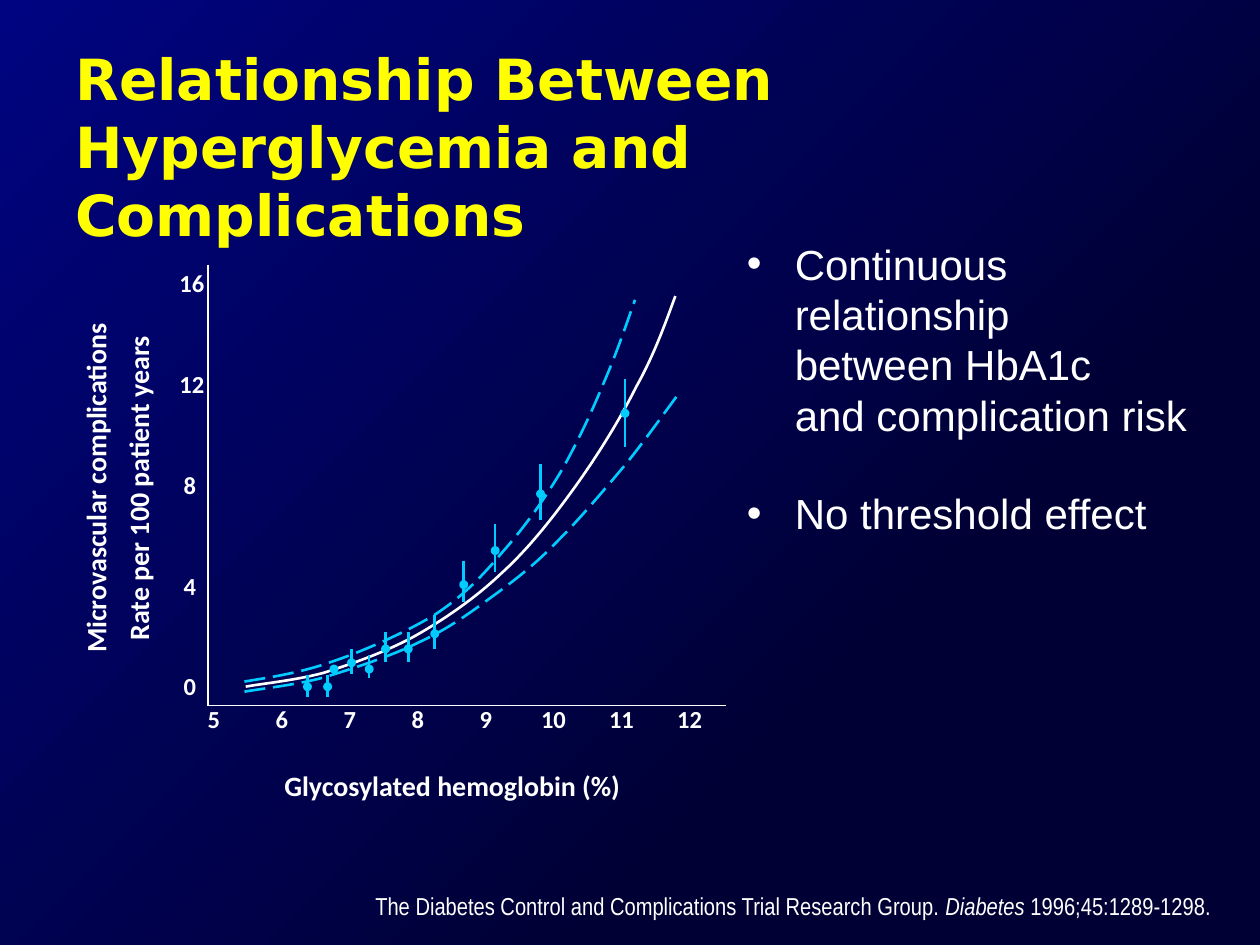
from dataclasses import dataclass
from lxml import etree
from pptx import Presentation
from pptx.dml.color import RGBColor
from pptx.enum.dml import MSO_LINE
from pptx.enum.shapes import MSO_CONNECTOR, MSO_SHAPE
from pptx.enum.text import MSO_ANCHOR, PP_ALIGN
from pptx.oxml.ns import qn
from pptx.util import Inches, Pt

LEFT, CENTER, RIGHT = PP_ALIGN.LEFT, PP_ALIGN.CENTER, PP_ALIGN.RIGHT
TOP, MIDDLE = MSO_ANCHOR.TOP, MSO_ANCHOR.MIDDLE
STRAIGHT, LONG_DASH = MSO_CONNECTOR.STRAIGHT, MSO_LINE.LONG_DASH
OVAL, RECTANGLE = MSO_SHAPE.OVAL, MSO_SHAPE.RECTANGLE


@dataclass(frozen=True)
class Theme:
    white: str = "FFFFFF"
    yellow: str = "FFFF00"
    cyan: str = "00CCFF"
    night: str = "000035"
    blue: str = "000480"
    title_font: str = "DejaVu Sans"
    body_font: str = "Arial"
    source_font: str = "Arial Narrow"
    chart_font: str = "Calibri"
    title_size: float = 32.4
    body_size: float = 24
    axis_title_size: float = 16
    small_size: float = 14
    curve_width: float = 1.5
    axis_width: float = 0.75


THEME = Theme()

SLIDE_SIZE = (10, 7.5)
TITLE = "Relationship Between Hyperglycemia and Complications"
BULLETS = [
    "Continuous relationship\vbetween HbA1c\vand complication risk",
    "No threshold effect",
]
SOURCE = [
    ("The Diabetes Control and Complications Trial Research Group. ", False),
    ("Diabetes", True),
    (" 1996;45:1289-1298.", False),
]
# text, box, rotation, alignment
AXIS_TITLES = [
    ("Microvascular complications", (-0.67, 3.67, 2.85, 0.37), 270, LEFT),
    ("Rate per 100 patient years", (-0.23, 3.67, 2.65, 0.37), 270, LEFT),
    ("Glycosylated hemoglobin (%)", (2.14, 6.05, 2.9, 0.37), 0, CENTER),
]
RATE_TICKS = ["16", "12", "8", "4", "0"]
HEMOGLOBIN_TICKS = ["5", "6", "7", "8", "9", "10", "11", "12"]
TICK_WIDTHS = {1: 0.31, 2: 0.4}  # by number of digits
RATE_CENTERS = {1: 1.5, 2: 1.52}
AXES = [((1.65, 2.1), (1.65, 5.6)), ((5.76, 5.6), (1.65, 5.6))]

# Bezier curves in inches: start, then two handles and an end for each segment
FITTED_CURVE = [
    (1.95, 5.45), (2.05, 5.43), (2.35, 5.4), (2.57, 5.34),
    (2.79, 5.27), (3.05, 5.18), (3.29, 5.05), (3.52, 4.92), (3.77, 4.75), (3.98, 4.55),
    (4.19, 4.36), (4.38, 4.12), (4.56, 3.87), (4.74, 3.62), (4.92, 3.33), (5.05, 3.07),
    (5.19, 2.82), (5.28, 2.57), (5.36, 2.35),
]
LOWER_LIMIT = [
    (1.94, 5.49), (2.04, 5.47), (2.33, 5.44), (2.56, 5.38),
    (2.79, 5.31), (3.1, 5.21), (3.32, 5.1), (3.54, 5), (3.71, 4.88), (3.9, 4.74),
    (4.08, 4.61), (4.26, 4.47), (4.43, 4.29), (4.61, 4.11), (4.81, 3.87), (4.97, 3.68),
    (5.13, 3.48), (5.3, 3.24), (5.39, 3.12),
]
UPPER_LIMIT = [
    (1.94, 5.41), (2.05, 5.39), (2.36, 5.35), (2.61, 5.26),
    (2.86, 5.18), (3.22, 5.02), (3.45, 4.88), (3.68, 4.73), (3.83, 4.57), (3.99, 4.38),
    (4.16, 4.19), (4.33, 3.95), (4.46, 3.73), (4.59, 3.5), (4.71, 3.24), (4.8, 3.02),
    (4.9, 2.79), (4.99, 2.52), (5.04, 2.38),
]
CURVES = [
    (FITTED_CURVE, THEME.white, None),
    (LOWER_LIMIT, THEME.cyan, LONG_DASH),
    (UPPER_LIMIT, THEME.cyan, LONG_DASH),
]
# x, dot centre, bar top, bar bottom
OBSERVATIONS = [
    (2.44, 5.45, 5.36, 5.53), (2.6, 5.45, 5.36, 5.53), (2.65, 5.31, None, None),
    (2.79, 5.26, 5.15, 5.35), (2.93, 5.31, 5.2, 5.38), (3.06, 5.15, 5.02, 5.25),
    (3.24, 5.15, 5.02, 5.25), (3.45, 5.03, 4.88, 5.15), (3.68, 4.64, 4.45, 4.78),
    (3.93, 4.37, 4.16, 4.54), (4.29, 3.92, 3.68, 4.13), (4.96, 3.28, 3.01, 3.55),
]
DOT = 0.05


def color(value):
    return RGBColor.from_string(value)


def add_backdrop(slide):
    """Radial gradient that starts dark in the bottom right corner."""
    backdrop = slide.shapes.add_shape(RECTANGLE, 0, 0, *map(Inches, SLIDE_SIZE))
    backdrop.shadow.inherit = False
    backdrop.line.fill.background()
    backdrop.fill.gradient()
    stops = backdrop.fill.gradient_stops
    for stop, value, position in zip(stops, (THEME.night, THEME.blue), (0.3, 1)):
        stop.color.rgb = color(value)
        stop.position = position
    linear = backdrop.element.find(".//" + qn("a:lin"))
    radial = etree.Element(qn("a:path"), path="circle")
    etree.SubElement(radial, qn("a:fillToRect"), l="100000", t="100000")
    linear.getparent().replace(linear, radial)


def add_text_box(slide, box, anchor=TOP, wrap=True, inset=None):
    shape = slide.shapes.add_textbox(*map(Inches, box))
    frame = shape.text_frame
    frame.word_wrap = wrap
    frame.vertical_anchor = anchor
    if inset is not None:
        frame.margin_left = frame.margin_right = Inches(inset)
        frame.margin_top = frame.margin_bottom = Inches(inset)
    return shape


def add_run(paragraph, text, font, size, value=THEME.white, bold=False, italic=False):
    for index, line in enumerate(text.split("\v")):
        if index:
            paragraph.add_line_break()
        run = paragraph.add_run()
        run.text = line
        run.font.name, run.font.size = font, Pt(size)
        run.font.bold, run.font.italic = bold, italic
        run.font.color.rgb = color(value)


def add_chart_label(slide, text, box, size, alignment=CENTER, rotation=0, anchor=TOP):
    shape = add_text_box(slide, box, anchor, wrap=False)
    shape.rotation = rotation
    paragraph = shape.text_frame.paragraphs[0]
    paragraph.alignment = alignment
    add_run(paragraph, text, THEME.chart_font, size, bold=True)


def add_tick(slide, text, center, top):
    width = TICK_WIDTHS[len(text)]
    add_chart_label(slide, text, (center - width / 2, top, width, 0.34), THEME.small_size, RIGHT)


def add_line(slide, start, end, value, width):
    line = slide.shapes.add_connector(STRAIGHT, *map(Inches, (*start, *end)))
    line.line.color.rgb = color(value)
    line.line.width = Pt(width)
    etree.SubElement(line.element.spPr, qn("a:effectLst"))


def add_curve(slide, nodes, value, dash):
    """Build an outline through all nodes, then join each three steps into a Bezier segment."""
    start, *steps = [tuple(map(Inches, node)) for node in nodes]
    builder = slide.shapes.build_freeform(*start)
    builder.add_line_segments(steps, close=False)
    curve = builder.convert_to_shape()
    straight = list(curve.element.iter(qn("a:lnTo")))
    for first in range(0, len(straight), 3):
        segment = etree.Element(qn("a:cubicBezTo"))
        straight[first].addprevious(segment)
        for step in straight[first:first + 3]:
            segment.append(step[0])
            step.getparent().remove(step)
    curve.shadow.inherit = False
    curve.fill.background()
    curve.line.color.rgb = color(value)
    curve.line.width = Pt(THEME.curve_width)
    if dash is not None:
        curve.line.dash_style = dash


def add_observation(slide, x, y, top, bottom):
    dot = slide.shapes.add_shape(OVAL, *map(Inches, (x - DOT / 2, y - DOT / 2, DOT, DOT)))
    dot.shadow.inherit = False
    dot.fill.solid()
    dot.fill.fore_color.rgb = dot.line.color.rgb = color(THEME.cyan)
    dot.line.width = Pt(THEME.curve_width)
    if top is not None:
        add_line(slide, (x, top), (x, bottom), THEME.cyan, THEME.curve_width)


def add_bullets(slide):
    frame = add_text_box(slide, (5.83, 1.84, 4, 3.49)).text_frame
    for index, text in enumerate(BULLETS):
        paragraph = frame.add_paragraph() if index else frame.paragraphs[0]
        properties = paragraph._p.get_or_add_pPr()
        properties.set("marL", str(Inches(0.38)))
        properties.set("indent", str(-Inches(0.38)))
        etree.SubElement(properties, qn("a:buFont"), typeface=THEME.body_font)
        etree.SubElement(properties, qn("a:buChar"), char="•")
        paragraph.space_before = Pt(27.5 if index else 0)
        add_run(paragraph, text, THEME.body_font, THEME.body_size)


def main():
    presentation = Presentation()
    presentation.slide_width, presentation.slide_height = map(Inches, SLIDE_SIZE)
    slide = presentation.slides.add_slide(presentation.slide_layouts[6])
    add_backdrop(slide)

    title = add_text_box(slide, (0.5, 0.3, 8.11, 1.25)).text_frame.paragraphs[0]
    add_run(title, TITLE, THEME.title_font, THEME.title_size, THEME.yellow, bold=True)
    add_bullets(slide)
    source = add_text_box(slide, (1.11, 7.07, 8.5, 0.24), inset=0).text_frame.paragraphs[0]
    source.alignment = RIGHT
    for text, italic in SOURCE:
        add_run(source, text, THEME.source_font, THEME.small_size, italic=italic)

    for text, box, rotation, alignment in AXIS_TITLES:
        add_chart_label(slide, text, box, THEME.axis_title_size, alignment, rotation, MIDDLE)
    for curve in CURVES:
        add_curve(slide, *curve)
    for observation in OBSERVATIONS:
        add_observation(slide, *observation)
    for start, end in AXES:
        add_line(slide, start, end, THEME.white, THEME.axis_width)
    for index, tick in enumerate(RATE_TICKS):
        add_tick(slide, tick, RATE_CENTERS[len(tick)], 2.08 + 0.8 * index)
    for index, tick in enumerate(HEMOGLOBIN_TICKS):
        add_tick(slide, tick, 1.69 + 0.54 * index, 5.54)

    presentation.save("out.pptx")


if __name__ == "__main__":
    main()
